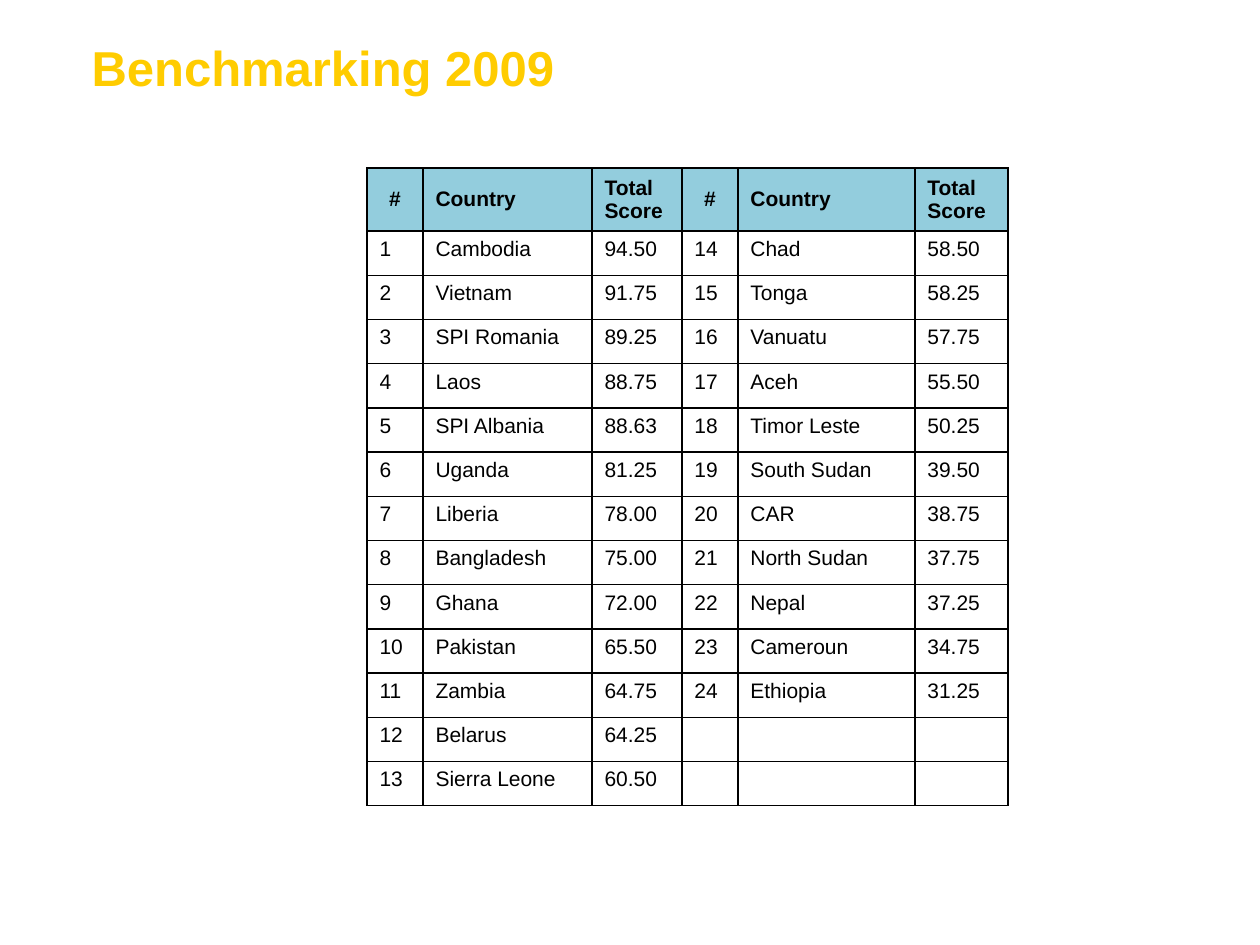
import pptx
import pptx.dml.color
import pptx.enum.text
import pptx.oxml
import pptx.oxml.ns
import pptx.util

EMU_PER_PX = 914400 / 126
FONT = "Arial"
GOLD = pptx.dml.color.RGBColor(0xFF, 0xCC, 0x00)
BLUE = pptx.dml.color.RGBColor(0x93, 0xCD, 0xDD)
BLACK = pptx.dml.color.RGBColor(0x00, 0x00, 0x00)

CELL_SIZE = 12
COLUMN_WIDTHS = [56, 169, 90, 56, 177, 93]
HEADER_HEIGHT = 63
BODY_HEIGHT = 575
RANKS_PER_COLUMN = 13
HEADERS = ["#", "Country", "Total Score", "#", "Country", "Total\nScore"]
SCORES = [
    ("Cambodia", "94.50"),
    ("Vietnam", "91.75"),
    ("SPI Romania", "89.25"),
    ("Laos", "88.75"),
    ("SPI Albania", "88.63"),
    ("Uganda", "81.25"),
    ("Liberia", "78.00"),
    ("Bangladesh", "75.00"),
    ("Ghana", "72.00"),
    ("Pakistan", "65.50"),
    ("Zambia", "64.75"),
    ("Belarus", "64.25"),
    ("Sierra Leone", "60.50"),
    ("Chad", "58.50"),
    ("Tonga", "58.25"),
    ("Vanuatu", "57.75"),
    ("Aceh", "55.50"),
    ("Timor Leste", "50.25"),
    ("South Sudan", "39.50"),
    ("CAR", "38.75"),
    ("North Sudan", "37.75"),
    ("Nepal", "37.25"),
    ("Cameroun", "34.75"),
    ("Ethiopia", "31.25"),
]


def px(n):
    return pptx.util.Emu(round(n * EMU_PER_PX))


def add_run(p, text, size, color, bold):
    r = p.add_run()
    r.text = text
    r.font.name = FONT
    r.font.size = pptx.util.Pt(size)
    r.font.color.rgb = color
    r.font.bold = bold


def set_title(s, text):
    sp = s.shapes.title
    sp.left, sp.top, sp.width, sp.height = px(79), px(31), px(494), px(72)
    tf = sp.text_frame
    tf.word_wrap = False
    tf.auto_size = pptx.enum.text.MSO_AUTO_SIZE.SHAPE_TO_FIT_TEXT
    tf.vertical_anchor = pptx.enum.text.MSO_ANCHOR.TOP
    p = tf.paragraphs[0]
    p.alignment = pptx.enum.text.PP_ALIGN.LEFT
    add_run(p, text, 28, GOLD, True)


def set_borders(cell):
    tcPr = cell._tc.get_or_add_tcPr()
    for i, side in enumerate(("lnL", "lnR", "lnT", "lnB")):
        ln = pptx.oxml.parse_xml(
            f'<a:{side} {pptx.oxml.ns.nsdecls("a")} w="12700">'
            f'<a:solidFill><a:srgbClr val="{BLACK}"/></a:solidFill></a:{side}>'
        )
        tcPr.insert(i, ln)


def fill_cell(cell, text, header):
    if header:
        cell.fill.solid()
        cell.fill.fore_color.rgb = BLUE
        cell.vertical_anchor = pptx.enum.text.MSO_ANCHOR.MIDDLE
    else:
        cell.fill.background()
    set_borders(cell)
    tf = cell.text_frame
    for i, line in enumerate(text.split("\n")):
        p = tf.add_paragraph() if i else tf.paragraphs[0]
        if line == "#":
            p.alignment = pptx.enum.text.PP_ALIGN.CENTER
        if line:
            add_run(p, line, CELL_SIZE, BLACK, header)
        else:
            p._p.get_or_add_endParaRPr().set("sz", str(CELL_SIZE * 100))


def ranking_rows():
    ranked = [(str(i), *score) for i, score in enumerate(SCORES, 1)]
    ranked += [("", "", "")] * (2 * RANKS_PER_COLUMN - len(ranked))
    halves = zip(ranked[:RANKS_PER_COLUMN], ranked[RANKS_PER_COLUMN:])
    return [left + right for left, right in halves]


def add_ranking_table(s):
    rows = [HEADERS] + ranking_rows()
    frame = s.shapes.add_table(
        len(rows), len(HEADERS), px(367), px(168),
        px(sum(COLUMN_WIDTHS)), px(HEADER_HEIGHT + BODY_HEIGHT),
    )
    table = frame.table
    table.horz_banding = False
    table.first_row = False
    for column, width in zip(table.columns, COLUMN_WIDTHS):
        column.width = px(width)
    for i, texts in enumerate(rows):
        header = i == 0
        table.rows[i].height = px(HEADER_HEIGHT if header else BODY_HEIGHT / RANKS_PER_COLUMN)
        for j, text in enumerate(texts):
            fill_cell(table.cell(i, j), text, header)


def main():
    prs = pptx.Presentation()
    prs.slide_width, prs.slide_height = px(1260), px(945)
    s = prs.slides.add_slide(prs.slide_layouts[5])
    set_title(s, "Benchmarking 2009")
    add_ranking_table(s)
    prs.save("out.pptx")


if __name__ == "__main__":
    main()
